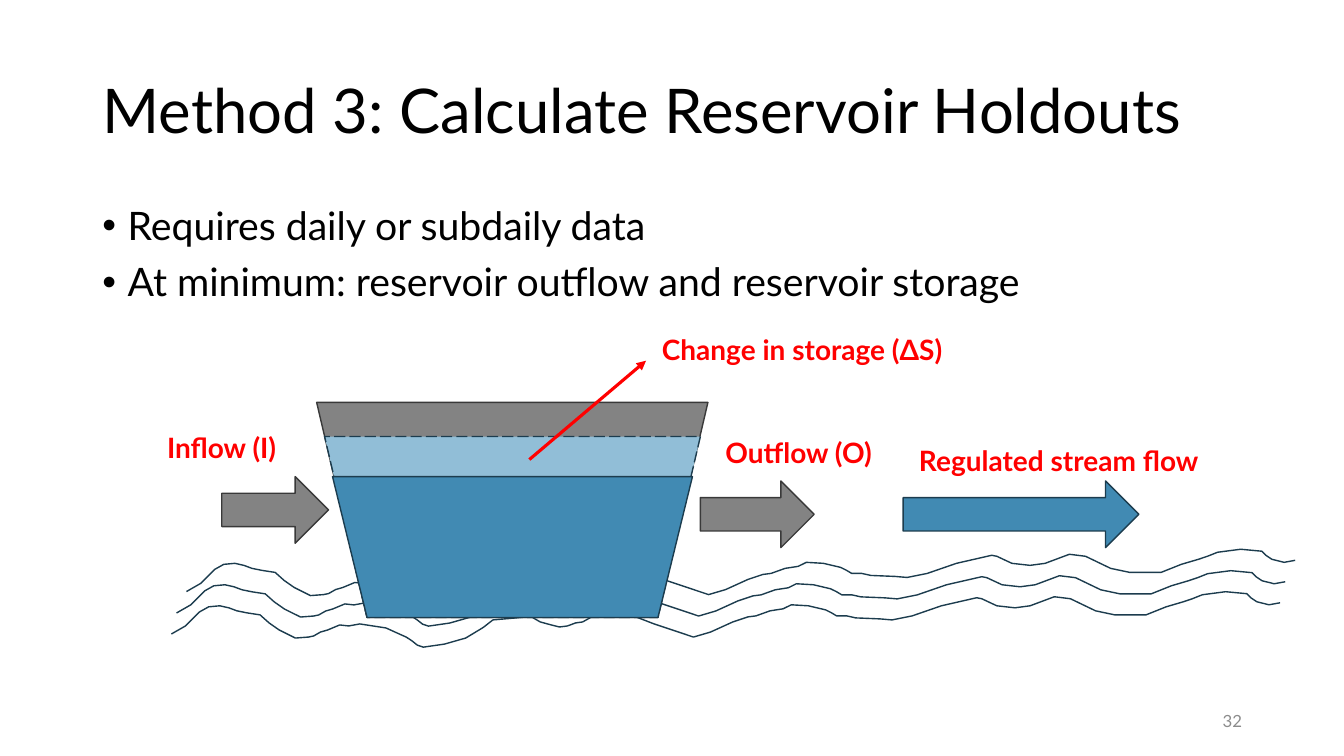
from pptx import Presentation
from pptx.dml.color import RGBColor
from pptx.enum.dml import MSO_LINE
from pptx.enum.shapes import MSO_CONNECTOR, MSO_SHAPE
from pptx.enum.text import MSO_ANCHOR, MSO_AUTO_SIZE, PP_ALIGN
from pptx.oxml.ns import qn
from pptx.util import Cm, Pt
from lxml.etree import SubElement

BLACK = RGBColor(0x00, 0x00, 0x00)
RED = RGBColor(0xFF, 0x00, 0x00)
GREY = RGBColor(0x83, 0x83, 0x83)
DARK_GREY = RGBColor(0x39, 0x39, 0x39)
NUMBER_GREY = RGBColor(0x8C, 0x8C, 0x8C)
BLUE = RGBColor(0x41, 0x8A, 0xB3)
LIGHT_BLUE = RGBColor(0x91, 0xBE, 0xD7)
NAVY = RGBColor(0x1C, 0x3C, 0x4E)


def style_text(paragraph, size, color, bold=False):
    for run in paragraph.runs:
        run.font.name = "Lato"
        run.font.size = Pt(size)
        run.font.bold = bold
        run.font.color.rgb = color


def style_shape(shape, fill, line):
    shape.shadow.inherit = False
    if fill is None:
        shape.fill.background()
    else:
        shape.fill.solid()
        shape.fill.fore_color.rgb = fill
    shape.line.color.rgb = line
    shape.line.width = Pt(1)


prs = Presentation()
prs.slide_width, prs.slide_height = Cm(33.87), Cm(19.05)
slide = prs.slides.add_slide(prs.slide_layouts[5])
shapes = slide.shapes

# Title
title = shapes.title
title.left, title.top, title.width, title.height = Cm(2.33), Cm(1.02), Cm(29.21), Cm(3.68)
title.text_frame.text = "Method 3: Calculate Reservoir Holdouts"
title.text_frame.auto_size = MSO_AUTO_SIZE.NONE
title.text_frame.vertical_anchor = MSO_ANCHOR.MIDDLE
heading = title.text_frame.paragraphs[0]
heading.alignment = PP_ALIGN.LEFT
heading.line_spacing = 0.9
style_text(heading, 44, BLACK)

# Data requirements
requirements = shapes.add_textbox(Cm(2.33), Cm(5.08), Cm(29.21), Cm(12.09)).text_frame
requirements.word_wrap = True
requirements.text = ("Requires daily or subdaily data\n"
                     "At minimum: reservoir outflow and reservoir storage")
for index, requirement in enumerate(requirements.paragraphs):
    requirement.line_spacing = 0.9
    requirement.space_before = Pt(10 if index else 0)
    properties = requirement._p.get_or_add_pPr()
    properties.set("marL", str(Cm(0.64)))
    properties.set("indent", str(-Cm(0.64)))
    SubElement(properties, qn("a:buFont")).set("typeface", "Arial")
    SubElement(properties, qn("a:buChar")).set("char", "•")
    style_text(requirement, 28, BLACK)

# Flow arrows
for left, top, width, fill, line in [
    (5.59, 12.01, 2.69, GREY, DARK_GREY),
    (17.65, 12.12, 2.87, GREY, DARK_GREY),
    (22.76, 12.12, 5.94, BLUE, NAVY),
]:
    flow = shapes.add_shape(MSO_SHAPE.RIGHT_ARROW, Cm(left), Cm(top), Cm(width), Cm(1.68))
    style_shape(flow, fill, line)

# Stream: one wave drawn three times, in hundredths of an inch
WAVE = [
    (0, 42), (14, 34), (28, 20), (37, 15), (48, 14), (57, 16), (65, 19), (75, 21),
    (88, 23), (97, 31), (107, 38), (123, 46), (136, 45), (141, 44), (148, 40),
    (155, 38), (167, 33), (176, 34), (187, 32), (213, 36), (224, 41), (233, 45),
    (239, 49), (244, 53), (250, 55), (271, 52), (292, 46), (307, 37), (310, 35),
    (319, 28), (342, 26), (358, 24), (359, 26), (366, 30), (377, 33), (385, 35),
    (393, 34), (401, 31), (408, 30), (417, 25), (439, 21), (453, 22), (479, 32),
    (500, 39), (518, 45), (535, 40), (557, 30), (572, 25), (580, 24), (594, 19),
    (607, 17), (615, 13), (632, 14), (649, 18), (655, 21), (660, 24), (670, 24),
    (679, 26), (703, 27), (715, 28), (735, 24), (764, 14), (799, 6), (804, 7),
    (819, 14), (837, 16), (852, 14), (876, 5), (892, 7), (917, 19), (936, 23),
    (967, 23), (987, 15), (1004, 10), (1013, 7), (1023, 3), (1046, 0), (1067, 2),
    (1071, 6), (1077, 10), (1085, 12), (1089, 13), (1100, 11),
]
for left, top in [(4.45, 14.38), (4.32, 14.91), (4.7, 13.84)]:
    outline = shapes.build_freeform(*WAVE[0], scale=Cm(0.0254))
    outline.add_line_segments(WAVE[1:], close=False)
    style_shape(outline.convert_to_shape(Cm(left), Cm(top)), None, NAVY)

# Reservoir: nested trapezoids sharing one floor
FLOOR_LEFT, FLOOR_TOP = 9.25, 15.56
for left, top, width, fill, line, dash in [
    (7.98, 10.14, 9.86, GREY, DARK_GREY, None),
    (8.18, 11.0, 9.47, LIGHT_BLUE, NAVY, MSO_LINE.LONG_DASH),
    (8.38, 12.01, 9.07, BLUE, NAVY, None),
]:
    height = FLOOR_TOP - top
    level = shapes.add_shape(MSO_SHAPE.TRAPEZOID, Cm(left), Cm(top), Cm(width), Cm(height))
    level.rotation = 180
    level.adjustments[0] = (FLOOR_LEFT - left) / height
    style_shape(level, fill, line)
    level.line.dash_style = dash

# Pointer to the change in storage
pointer = shapes.add_connector(MSO_CONNECTOR.STRAIGHT, Cm(13.34), Cm(11.58), Cm(16.28), Cm(9.09))
pointer.line.color.rgb = RED
pointer.line.width = Pt(2.25)
SubElement(pointer.line._get_or_add_ln(), qn("a:tailEnd")).set("type", "triangle")
SubElement(pointer._element.spPr, qn("a:effectLst"))

# Labels
for left, top, width, wording in [
    (16.43, 8.26, 8.59, "Change in storage (ΔS)"),
    (18.03, 10.85, 4.57, "Outflow (O)"),
    (3.96, 10.72, 4.52, "Inflow (I)"),
    (22.91, 11.05, 8.43, "Regulated stream flow"),
]:
    label = shapes.add_textbox(Cm(left), Cm(top), Cm(width), Cm(1.12)).text_frame
    label.word_wrap = True
    label.text = wording
    style_text(label.paragraphs[0], 20, RED, bold=True)

# Slide number
number = shapes.add_textbox(Cm(23.93), Cm(17.65), Cm(7.62), Cm(1.02)).text_frame
number.word_wrap = True
number.vertical_anchor = MSO_ANCHOR.MIDDLE
number.text = "32"
number.paragraphs[0].alignment = PP_ALIGN.RIGHT
style_text(number.paragraphs[0], 12, NUMBER_GREY)

prs.save("out.pptx")
